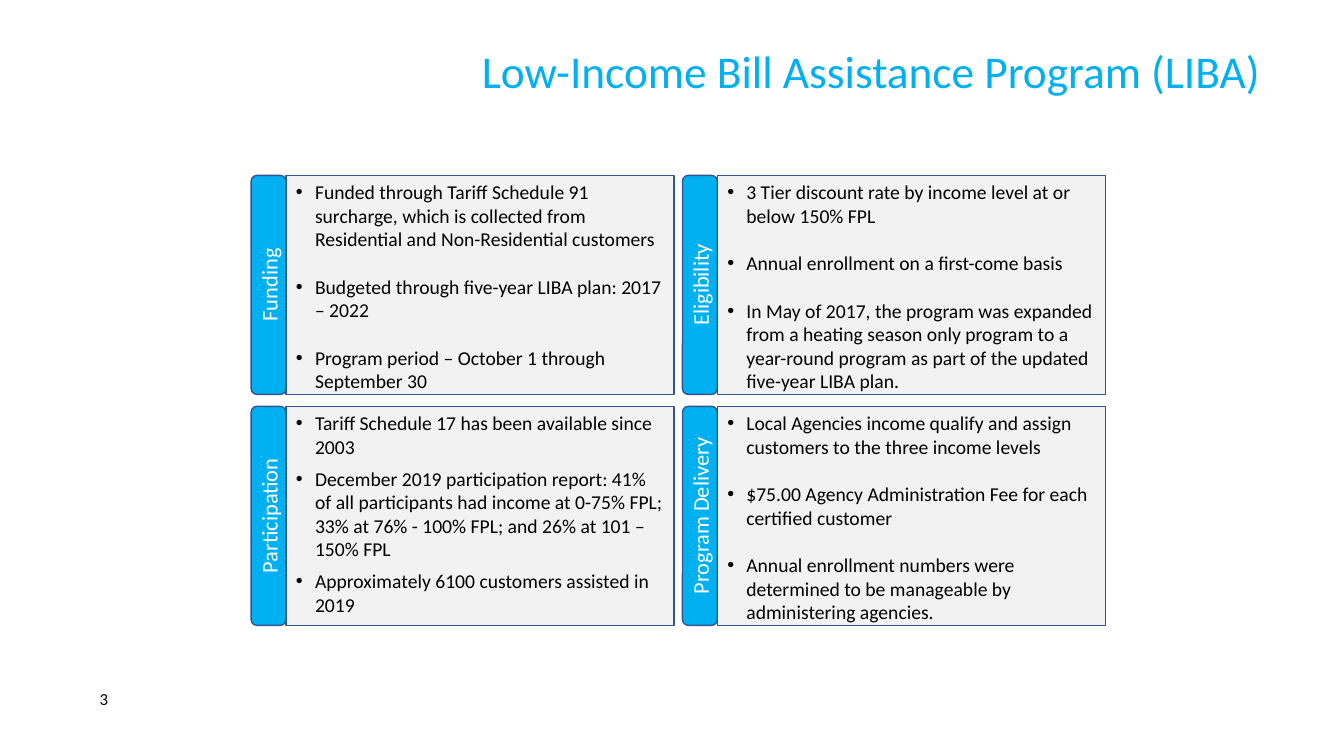
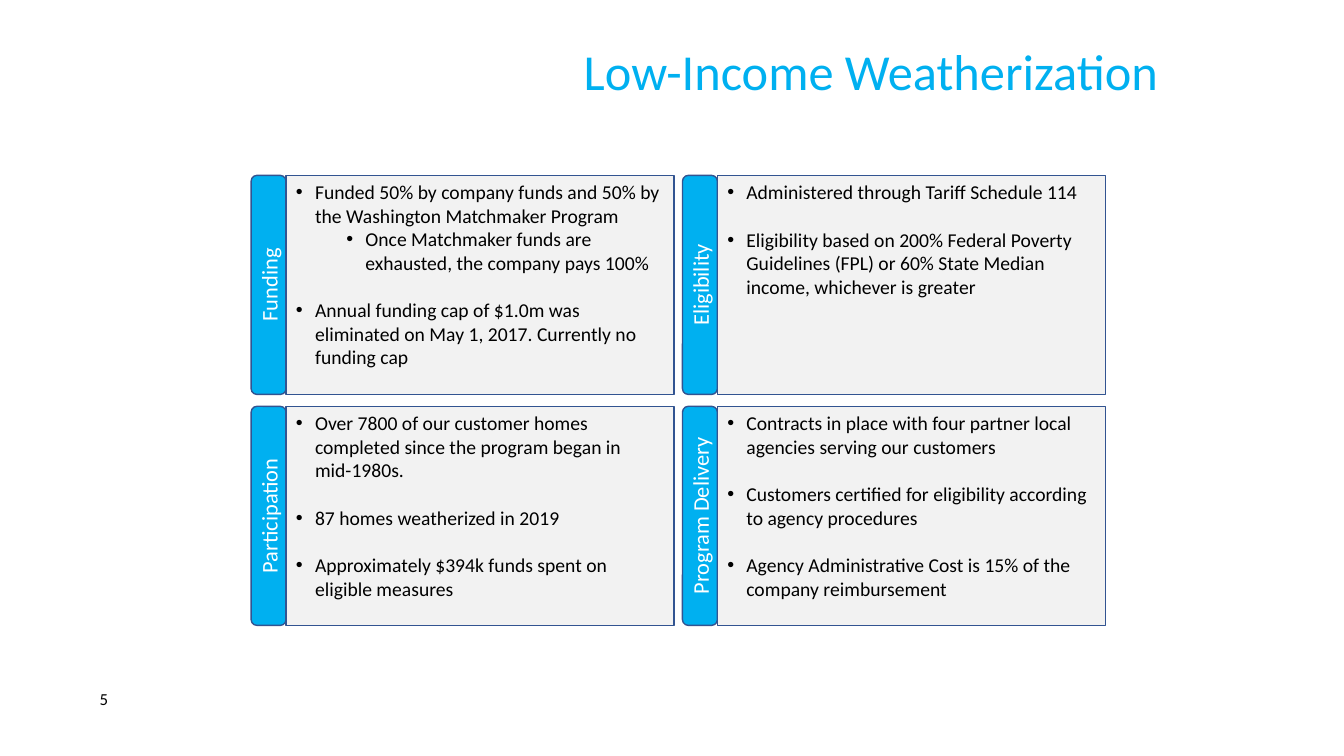
from lxml import etree
from pptx import Presentation
from pptx.dml.color import RGBColor
from pptx.enum.shapes import MSO_SHAPE
from pptx.enum.text import MSO_ANCHOR, MSO_AUTO_SIZE, PP_ALIGN
from pptx.oxml.ns import qn
from pptx.util import Cm, Pt

# Content: each panel is (label, gap between bullets in points, [(level, text)])
SLIDES = [
    {"title": "Low-Income Bill Assistance Program (LIBA)", "size": 32.4, "number": "3", "panels": [
        ("Funding", 17, [
            (0, "Funded through Tariff Schedule 91 surcharge, which is collected from "
                "Residential and Non-Residential customers"),
            (0, "Budgeted through five-year LIBA plan: 2017 – 2022"),
            (0, "Program period – October 1 through September 30")]),
        ("Eligibility", 17, [
            (0, "3 Tier discount rate by income level at or below 150% FPL"),
            (0, "Annual enrollment on a first-come basis"),
            (0, "In May of 2017, the program was expanded from a heating season only program "
                "to a year-round program as part of the updated five-year LIBA plan.")]),
        ("Participation", 6, [
            (0, "Tariff Schedule 17 has been available since 2003"),
            (0, "December 2019 participation report: 41% of all participants had income at "
                "0-75% FPL; 33% at 76% - 100% FPL; and 26% at 101 – 150% FPL"),
            (0, "Approximately 6100 customers assisted in 2019")]),
        ("Program Delivery", 17, [
            (0, "Local Agencies income qualify and assign customers to the three income levels"),
            (0, "$75.00 Agency Administration Fee for each certified customer"),
            (0, "Annual enrollment numbers were determined to be manageable by "
                "administering agencies.")]),
    ]},
    {"title": "Low-Income Weatherization", "size": 36, "number": "5", "panels": [
        ("Funding", 17, [
            (0, "Funded 50% by company funds and 50% by the Washington Matchmaker Program"),
            (1, "Once Matchmaker funds are exhausted, the company pays 100%"),
            (0, "Annual funding cap of $1.0m was eliminated on May 1, 2017. "
                "Currently no funding cap")]),
        ("Eligibility", 17, [
            (0, "Administered through Tariff Schedule 114"),
            (0, "Eligibility based on 200% Federal Poverty Guidelines (FPL) or 60% State "
                "Median income, whichever is greater")]),
        ("Participation", 17, [
            (0, "Over 7800 of our customer homes completed since the program began in mid-1980s."),
            (0, "87 homes weatherized in 2019"),
            (0, "Approximately $394k funds spent on eligible measures")]),
        ("Program Delivery", 17, [
            (0, "Contracts in place with four partner local agencies serving our customers"),
            (0, "Customers certified for eligibility according to agency procedures"),
            (0, "Agency Administrative Cost is 15% of the company reimbursement")]),
    ]},
]

# Shared style
FONT = "Calibri"
ACCENT, BORDER, PANEL, BLACK, WHITE = "00B0F0", "325491", "F2F2F2", "000000", "FFFFFF"

# Panel grid, in cm
LEFT, TOP = 6.33, 4.42
LABEL_W, BODY_W, PANEL_H = 0.88, 9.78, 5.52
COL_GAP, ROW_GAP = 0.21, 0.3
HANG, LEVEL_STEP = 0.48, 1.27


def rgb(value):
    return RGBColor.from_string(value)


def add_run(p, text, size, color):
    r = p.add_run()
    r.text = text
    for name, value in {"name": FONT, "size": Pt(size), "bold": False}.items():
        setattr(r.font, name, value)
    r.font.color.rgb = rgb(color)


def add_box(s, kind, x, y, w, fill):
    sp = s.shapes.add_shape(kind, Cm(x), Cm(y), Cm(w), Cm(PANEL_H))
    sp.shadow.inherit = False
    sp.fill.solid()
    sp.fill.fore_color.rgb = rgb(fill)
    sp.line.color.rgb = rgb(BORDER)
    sp.line.width = Pt(1)
    return sp.text_frame


def add_label(s, x, y, text):
    tf = add_box(s, MSO_SHAPE.ROUNDED_RECTANGLE, x, y, LABEL_W, ACCENT)
    tf.vertical_anchor = MSO_ANCHOR.MIDDLE
    tf._txBody.bodyPr.set("vert", "vert270")
    p = tf.paragraphs[0]
    p.alignment = PP_ALIGN.CENTER
    add_run(p, text, 16, WHITE)


def add_bullets(s, x, y, gap, items):
    tf = add_box(s, MSO_SHAPE.RECTANGLE, x, y, BODY_W, PANEL)
    tf.word_wrap = True
    tf.vertical_anchor = MSO_ANCHOR.TOP
    for i, (level, text) in enumerate(items):
        p = tf.add_paragraph() if i else tf.paragraphs[0]
        p.alignment = PP_ALIGN.LEFT
        p.level = level
        if i and level == 0:
            p.space_before = Pt(gap)
        pPr = p._p.get_or_add_pPr()
        pPr.set("marL", str(Cm(HANG + level * LEVEL_STEP)))
        pPr.set("indent", str(-Cm(HANG)))
        etree.SubElement(pPr, qn("a:buFont")).set("typeface", "Arial")
        etree.SubElement(pPr, qn("a:buChar")).set("char", "•")
        add_run(p, text, 14, BLACK)


def add_title(s, text, size):
    sp = s.shapes.title
    sp.left, sp.top, sp.width, sp.height = Cm(11.51), Cm(0.38), Cm(20.88), Cm(2.97)
    tf = sp.text_frame
    tf.auto_size = MSO_AUTO_SIZE.NONE
    tf.vertical_anchor = MSO_ANCHOR.MIDDLE
    p = tf.paragraphs[0]
    p.alignment = PP_ALIGN.CENTER
    p.line_spacing = 0.9
    add_run(p, text, size, ACCENT)


def add_number(s, text):
    tf = s.shapes.add_textbox(Cm(2.26), Cm(17.22), Cm(1.02), Cm(0.76)).text_frame
    tf.word_wrap = False
    tf.paragraphs[0].alignment = PP_ALIGN.LEFT
    add_run(tf.paragraphs[0], text, 12, BLACK)


def main():
    prs = Presentation()
    prs.slide_width, prs.slide_height = Cm(33.87), Cm(19.05)
    for data in SLIDES:
        s = prs.slides.add_slide(prs.slide_layouts[5])
        add_number(s, data["number"])
        add_title(s, data["title"], data["size"])
        # Panels in two columns, row by row
        for i, (label, gap, items) in enumerate(data["panels"]):
            row, col = divmod(i, 2)
            x = LEFT + col * (LABEL_W + BODY_W + COL_GAP)
            y = TOP + row * (PANEL_H + ROW_GAP)
            add_label(s, x, y, label)
            add_bullets(s, x + LABEL_W, y, gap, items)
    prs.save("out.pptx")


if __name__ == "__main__":
    main()
